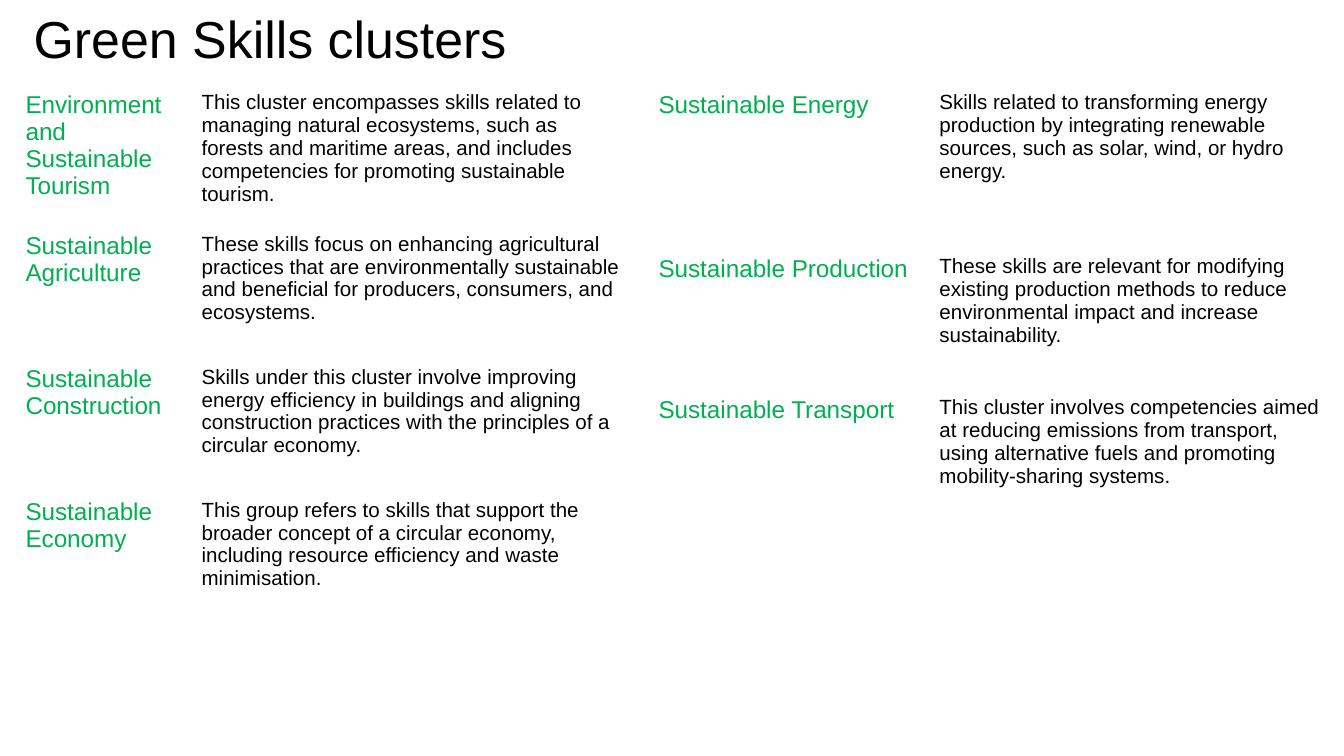
from pptx import Presentation
from pptx.dml.color import RGBColor
from pptx.util import Inches, Pt

BLACK = RGBColor(0x00, 0x00, 0x00)
GREEN = RGBColor(0x00, 0xB0, 0x50)
WHITE = RGBColor(0xFF, 0xFF, 0xFF)
FONT = "Arial"
SLIDE_WIDTH = Inches(10)
SLIDE_HEIGHT = SLIDE_WIDTH * 9 // 16
CELL_MARGIN = Inches(0.1)
TABLE_TOP = 0.58

LEFT_CLUSTERS = [
    ("Environment and Sustainable Tourism",
     "This cluster encompasses skills related to managing natural ecosystems, such as forests "
     "and maritime areas, and includes competencies for promoting sustainable tourism."),
    ("Sustainable Agriculture",
     "These skills focus on enhancing agricultural practices that are environmentally "
     "sustainable and beneficial for producers, consumers, and ecosystems."),
    ("Sustainable Construction",
     "Skills under this cluster involve improving energy efficiency in buildings and aligning "
     "construction practices with the principles of a circular economy."),
    ("Sustainable Economy",
     "This group refers to skills that support the broader concept of a circular economy, "
     "including resource efficiency and waste minimisation."),
]
RIGHT_CLUSTERS = [
    ("Sustainable Energy",
     "Skills related to transforming energy production by integrating renewable sources, "
     "such as solar, wind, or hydro energy."),
    ("Sustainable Production",
     "These skills are relevant for modifying existing production methods to reduce "
     "environmental impact and increase sustainability."),
    ("Sustainable Transport",
     "This cluster involves competencies aimed at reducing emissions from transport, using "
     "alternative fuels and promoting mobility-sharing systems."),
]


def write_text(text_frame, text, size, color):
    paragraph = text_frame.paragraphs[0]
    paragraph.text = text
    paragraph.font.name = FONT
    paragraph.font.size = Pt(size)
    paragraph.font.color.rgb = color


def add_title(slide, left, top, width, height, text):
    box = slide.shapes.add_textbox(Inches(left), Inches(top), Inches(width), Inches(height))
    frame = box.text_frame
    frame.word_wrap = True
    frame.margin_left = frame.margin_right = frame.margin_top = frame.margin_bottom = 0
    write_text(frame, text, 27.8, BLACK)


def add_cluster_table(slide, left, top, column_widths, row_heights, clusters):
    table = slide.shapes.add_table(
        len(clusters), len(column_widths), Inches(left), Inches(top),
        Inches(sum(column_widths)), Inches(sum(row_heights))).table
    table.first_row = table.horz_banding = False
    for column, width in zip(table.columns, column_widths):
        column.width = Inches(width)
    for row, height, cluster in zip(table.rows, row_heights, clusters):
        row.height = Inches(height)
        # Green cluster name, then its description in black
        for cell, text, size, color in zip(row.cells, cluster, (13, 11), (GREEN, BLACK)):
            cell.fill.solid()
            cell.fill.fore_color.rgb = WHITE
            cell.margin_left = cell.margin_right = CELL_MARGIN
            cell.margin_top = cell.margin_bottom = CELL_MARGIN
            write_text(cell.text_frame, text, size, color)


def main():
    presentation = Presentation()
    presentation.slide_width = SLIDE_WIDTH
    presentation.slide_height = SLIDE_HEIGHT
    slide = presentation.slides.add_slide(presentation.slide_layouts[6])

    # Two columns of clusters below the title
    add_cluster_table(slide, 0.09, TABLE_TOP, (1.31, 3.34), (0.99,) * 4, LEFT_CLUSTERS)
    add_title(slide, 0.25, 0.05, 9.4, 0.73, "Green Skills clusters")
    add_cluster_table(slide, 4.8, TABLE_TOP, (2.09, 3.06), (1.22, 1.05, 0.95), RIGHT_CLUSTERS)

    presentation.save("out.pptx")


if __name__ == "__main__":
    main()
